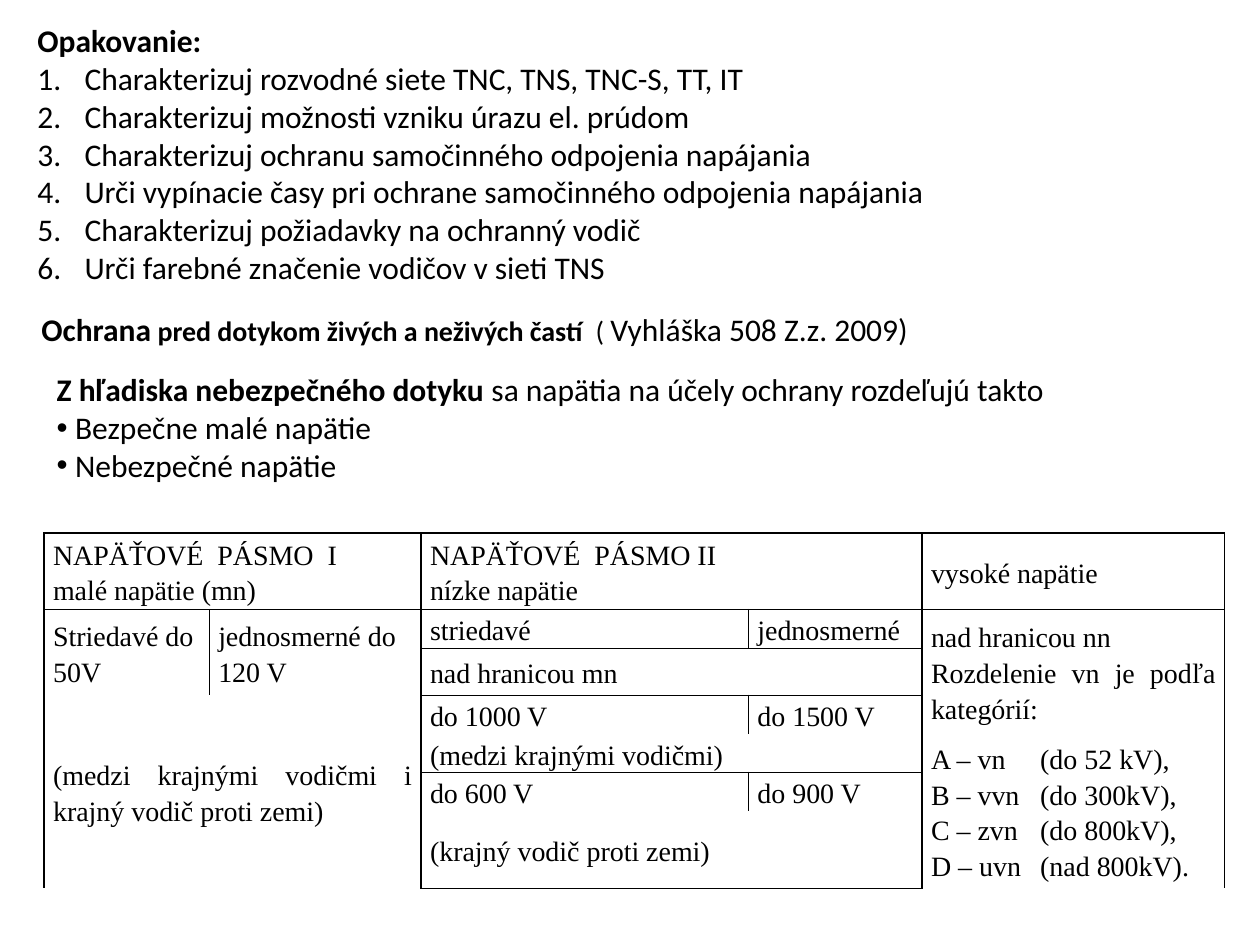
from dataclasses import dataclass

from lxml import etree
from pptx import Presentation
from pptx.dml.color import RGBColor
from pptx.enum.text import MSO_ANCHOR, MSO_AUTO_SIZE, PP_ALIGN
from pptx.oxml.ns import qn
from pptx.util import Cm, Pt

LEFT, JUST = PP_ALIGN.LEFT, PP_ALIGN.JUSTIFY
TOP, MIDDLE = MSO_ANCHOR.TOP, MSO_ANCHOR.MIDDLE
FIXED = MSO_AUTO_SIZE.NONE


@dataclass(frozen=True)
class Theme:
    ink: RGBColor = RGBColor(0, 0, 0)
    sans: str = "Calibri"
    serif: str = "Times New Roman"
    text: int = 18
    small: int = 16
    line: int = 1


THEME = Theme()

REVIEW = [
    "Charakterizuj rozvodné siete TNC, TNS, TNC-S, TT, IT",
    "Charakterizuj možnosti vzniku úrazu el. prúdom",
    "Charakterizuj ochranu samočinného odpojenia napájania",
    "Urči vypínacie časy pri ochrane samočinného odpojenia napájania",
    "Charakterizuj požiadavky na ochranný vodič",
    "Urči farebné značenie vodičov v sieti TNS",
]
KINDS = ["Bezpečne malé napätie", "Nebezpečné napätie"]

COLS = [3.33, 4.27, 6.6, 3.5, 6.1]
ROWS = [1.55, 0.78, 0.95, 0.78, 0.77, 0.77, 1.57]
TAB = 2.2

# row, column, rows spanned, columns spanned, ruled sides, text
CELLS = [
    (0, 0, 1, 2, "LRTB", "NAPÄŤOVÉ  PÁSMO  I\nmalé napätie (mn)"),
    (0, 2, 1, 2, "LRTB", "NAPÄŤOVÉ  PÁSMO II\nnízke napätie"),
    (0, 4, 1, 1, "LRTB", "vysoké napätie"),
    (1, 0, 2, 1, "LRT", "Striedavé do\n50V"),
    (1, 1, 2, 1, "LRT", "jednosmerné do\n120 V"),
    (1, 2, 1, 1, "LRTB", "striedavé"),
    (1, 3, 1, 1, "LRTB", "jednosmerné"),
    (1, 4, 3, 1, "LRT", "nad hranicou nn\nRozdelenie vn je podľa kategórií:"),
    (2, 2, 1, 2, "LRTB", "nad hranicou mn"),
    (3, 0, 4, 2, "LRB", "(medzi krajnými vodičmi i krajný vodič proti zemi)"),
    (3, 2, 1, 1, "LRT", "do 1000 V"),
    (3, 3, 1, 1, "LRT", "do 1500 V"),
    (4, 2, 1, 2, "LRB", "(medzi krajnými vodičmi)"),
    (4, 4, 3, 1, "LRB", "A – vn\t(do 52 kV),\nB – vvn\t(do 300kV),\n"
                        "C – zvn\t(do 800kV),\nD – uvn\t(nad 800kV)."),
    (5, 2, 1, 1, "LRT", "do 600 V"),
    (5, 3, 1, 1, "LRT", "do 900 V"),
    (6, 2, 1, 2, "LRB", "(krajný vodič proti zemi)"),
]


def place(shape, box, anchor):
    shape.left, shape.top, shape.width, shape.height = map(Cm, box)
    frame = shape.text_frame
    frame.auto_size = FIXED
    frame.vertical_anchor = anchor
    return frame


def style(para, face, size, align=LEFT, space=1.0):
    para.alignment = align
    para.line_spacing = space
    para.space_before = para.space_after = Pt(0)
    font = para.font
    font.name, font.size = face, Pt(size)
    font.color.rgb = THEME.ink


def add_runs(para, parts):
    style(para, THEME.sans, THEME.text)
    for text, bold, size in parts:
        run = para.add_run()
        run.text = text
        run.font.bold = bold
        run.font.size = Pt(size)


def mark(para, tag, indent=0.0, **attrs):
    props = para._p.get_or_add_pPr()
    props.set("marL", str(Cm(indent)))
    props.set("indent", str(-Cm(indent)))
    etree.SubElement(props, qn("a:" + tag), attrs)


def add_list(shape, box, lead, items, tag, indent, **attrs):
    frame = place(shape, box, TOP)
    head = frame.paragraphs[0]
    add_runs(head, lead)
    mark(head, "buNone")
    for item in items:
        para = frame.add_paragraph()
        add_runs(para, [(item, False, THEME.text)])
        mark(para, tag, indent, **attrs)


def add_title(shape, box):
    frame = place(shape, box, MIDDLE)
    frame.word_wrap = False
    add_runs(frame.paragraphs[0], [
        ("Ochrana", True, THEME.text),
        (" pred dotykom živých a neživých častí  ", True, THEME.small),
        ("( ", False, THEME.small),
        ("Vyhláška 508 Z.z. 2009)", False, THEME.text),
    ])


def rule(cell, sides):
    props = cell._tc.get_or_add_tcPr()
    for side in "LRTB":
        line = etree.SubElement(props, qn("a:ln" + side), w=str(Pt(THEME.line)))
        if side in sides:
            fill = etree.SubElement(line, qn("a:solidFill"))
            etree.SubElement(fill, qn("a:srgbClr"), val=str(THEME.ink))
        else:
            etree.SubElement(line, qn("a:noFill"))
    cell.fill.background()


def set_cell(cell, text):
    cell.margin_left = cell.margin_right = Cm(0.18)
    cell.margin_top = cell.margin_bottom = 0
    cell.vertical_anchor = MIDDLE
    frame = cell.text_frame
    frame.text = text
    for para in frame.paragraphs:
        tabbed = "\t" in para.text
        style(para, THEME.serif, THEME.small, LEFT if tabbed else JUST, 1.15)
        if tabbed:
            tabs = etree.SubElement(para._p.get_or_add_pPr(), qn("a:tabLst"))
            etree.SubElement(tabs, qn("a:tab"), pos=str(Cm(TAB)), algn="l")


def add_grid(slide, left, top):
    size = Cm(sum(COLS)), Cm(sum(ROWS))
    table = slide.shapes.add_table(
        len(ROWS), len(COLS), Cm(left), Cm(top), *size).table
    table.first_row = table.horz_banding = False
    for col, width in zip(table.columns, COLS):
        col.width = Cm(width)
    for row, height in zip(table.rows, ROWS):
        row.height = Cm(height)
    for row, col, down, wide, sides, text in CELLS:
        last, end = row + down - 1, col + wide - 1
        first = table.cell(row, col)
        if down * wide > 1:
            first.merge(table.cell(last, end))
        for r in range(row, last + 1):
            for c in range(col, end + 1):
                edges = {"L": c == col, "R": c == end,
                         "T": r == row, "B": r == last}
                cell = table.cell(r, c)
                set_cell(cell, text if (r, c) == (row, col) else "")
                rule(cell, [side for side in sides if edges[side]])


def main():
    deck = Presentation()
    deck.slide_width, deck.slide_height = Cm(25.4), Cm(19.05)
    slide = deck.slides.add_slide(deck.slide_layouts[3])
    title, review, kinds = slide.placeholders
    add_title(title, (0.58, 6.12, 18.06, 1.02))
    add_list(review, (0.5, 0.3, 24.4, 6.4),
             [("Opakovanie:", True, THEME.text)],
             REVIEW, "buAutoNum", 0.95, type="arabicPeriod")
    add_list(kinds, (0.89, 7.34, 23.8, 3.33),
             [("Z hľadiska nebezpečného dotyku ", True, THEME.text),
              ("sa napätia na účely ochrany rozdeľujú takto", False, THEME.text)],
             KINDS, "buChar", 0.37, char="•")
    add_grid(slide, 0.89, 10.74)
    deck.save("out.pptx")


if __name__ == "__main__":
    main()
